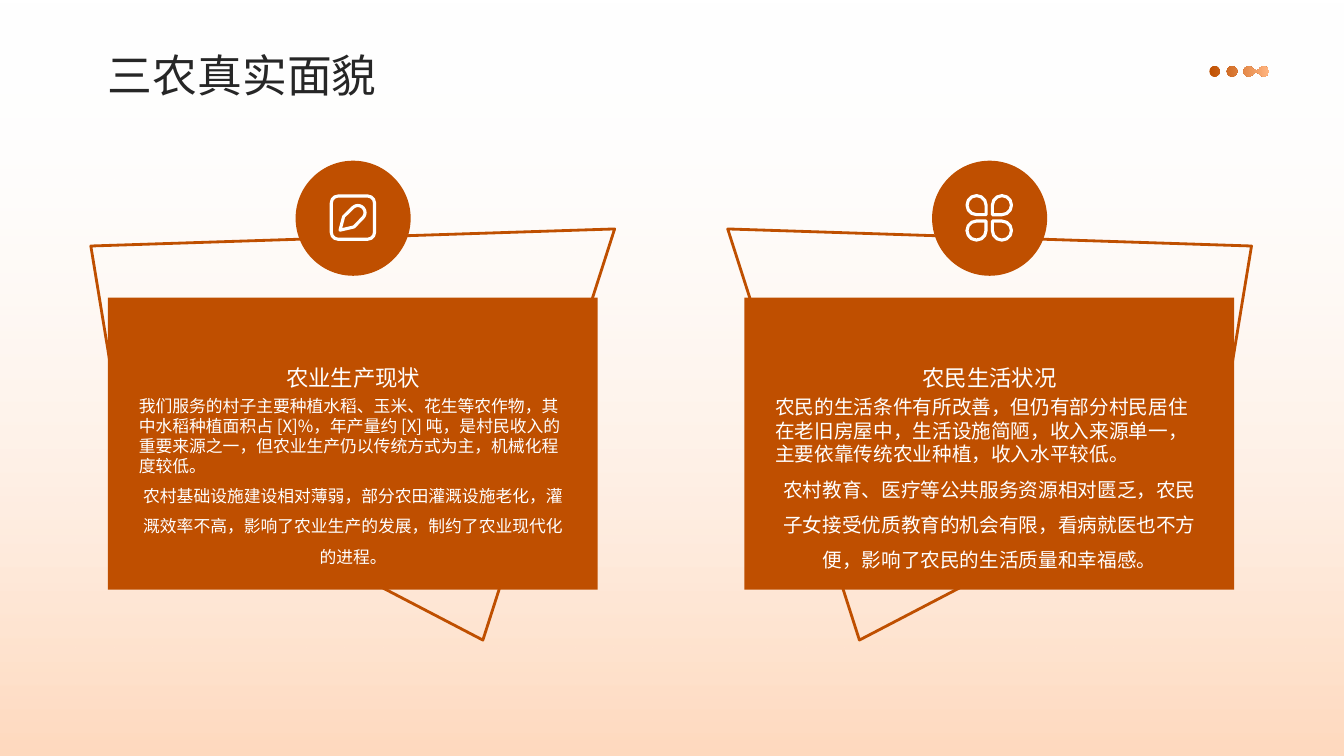
from math import cos, radians, sin

from lxml.etree import SubElement
from pptx import Presentation
from pptx.dml.color import RGBColor
from pptx.enum.shapes import MSO_SHAPE as Shape
from pptx.enum.text import MSO_ANCHOR as Anchor, PP_ALIGN as Align
from pptx.oxml.ns import qn
from pptx.util import Cm, Pt

FONT = "Noto Sans CJK SC"
RUST, WHITE, INK = "BF4F00", "FFFFFF", "262626"
PAGE_WIDTH, PAGE_HEIGHT = 33.87, 19.05
CARD_STEP = 16.04
MIRROR_SUM = 33.83  # left x + right x of mirrored frame corners
FRAME = [(12.17, 16.13), (3.15, 11.43), (2.29, 6.2), (15.49, 5.77)]

CARDS = [
    ("农业生产现状", 12,
     "我们服务的村子主要种植水稻、玉米、花生等农作物，其中水稻种植面积占 [X]%，年产量约 [X] 吨，"
     "是村民收入的重要来源之一，但农业生产仍以传统方式为主，机械化程度较低。",
     "农村基础设施建设相对薄弱，部分农田灌溉设施老化，灌溉效率不高，影响了农业生产的发展，"
     "制约了农业现代化的进程。"),
    ("农民生活状况", 14,
     "农民的生活条件有所改善，但仍有部分村民居住在老旧房屋中，生活设施简陋，收入来源单一，"
     "主要依靠传统农业种植，收入水平较低。",
     "农村教育、医疗等公共服务资源相对匮乏，农民子女接受优质教育的机会有限，看病就医也不方便，"
     "影响了农民的生活质量和幸福感。"),
]


def color(value):
    return RGBColor.from_string(value)


def paint(shape, fill=None, line=None, weight=2):
    shape.shadow.inherit = False
    if fill:
        shape.fill.solid()
        shape.fill.fore_color.rgb = color(fill)
    else:
        shape.fill.background()
    if line:
        shape.line.color.rgb = color(line)
        shape.line.width = Pt(weight)
    else:
        shape.line.fill.background()


def paint_gradient(shape, start, end, angle):
    """Fill with two colours; angle is counter-clockwise in degrees."""
    paint(shape)
    shape.fill.gradient()
    shape.fill.gradient_angle = angle
    for stop, value in zip(shape.fill.gradient_stops, (start, end)):
        stop.color.rgb = color(value)


def add_preset(page, kind, left, top, width, height, **look):
    shape = page.shapes.add_shape(kind, Cm(left), Cm(top), Cm(width), Cm(height))
    paint(shape, **look)
    return shape


def add_outline(page, *contours):
    """Build one freeform from closed contours given in centimetres."""
    contours = [[(Cm(x), Cm(y)) for x, y in contour] for contour in contours]
    builder = page.shapes.build_freeform(*contours[0][0], scale=1.0)
    for contour in contours:
        if contour is not contours[0]:
            builder.move_to(*contour[0])
        builder.add_line_segments(contour[1:], close=True)
    return builder.convert_to_shape()


def arc(x, y, radius, start, end, step=15):
    return [(x + radius * cos(radians(a)), y + radius * sin(radians(a)))
            for a in range(start, end + 1, step)]


def prepare_frame(frame, anchor):
    frame.word_wrap = True
    frame.vertical_anchor = anchor
    frame.margin_left = frame.margin_right = 0
    frame.margin_top = frame.margin_bottom = 0


def write(para, text, size, ink=WHITE, align=Align.LEFT, spacing=1.0):
    para.alignment = align
    para.line_spacing = spacing
    para.space_before = para.space_after = Pt(0)
    span = para.add_run()
    span.text = text
    span.font.size = Pt(size)
    span.font.name = FONT
    span.font.color.rgb = color(ink)
    SubElement(span.font._element, qn("a:ea"), typeface=FONT)


def add_text(page, left, top, width, height, anchor, *paragraphs):
    box = page.shapes.add_textbox(Cm(left), Cm(top), Cm(width), Cm(height))
    prepare_frame(box.text_frame, anchor)
    for index, (text, look) in enumerate(paragraphs):
        para = box.text_frame.add_paragraph() if index else box.text_frame.paragraphs[0]
        write(para, text, **look)


def add_title(page, text):
    title = page.shapes.title
    title.left, title.top = Cm(2.72), Cm(1.17)
    title.width, title.height = Cm(27.33), Cm(1.3)
    prepare_frame(title.text_frame, Anchor.MIDDLE)
    write(title.text_frame.paragraphs[0], text, 32, ink=INK, spacing=1.1)


def add_backdrop(page):
    """Lay a gradient that fades in downwards beneath the title."""
    backdrop = add_preset(page, Shape.RECTANGLE, 0, 0, PAGE_WIDTH, PAGE_HEIGHT)
    paint_gradient(backdrop, WHITE, "FFDABF", 270)
    first_color = next(backdrop.element.iter(qn("a:srgbClr")))
    SubElement(first_color, qn("a:alpha"), val="0")
    page.shapes.title.element.addprevious(backdrop.element)


def add_dots(page):
    y, radius = 1.8, 0.13
    singles = [arc(x, y, radius, 0, 345) for x in (30.61, 31.05)]
    linked = (arc(31.47, y, radius, 30, 330) + [(31.66, y - 0.02)]
              + arc(31.85, y, radius, 210, 510) + [(31.66, y + 0.02)])
    paint_gradient(add_outline(page, *singles, linked), RUST, "FFB47F", 0)


def add_card(page, shift, corners, heading, size, intro, detail):
    paint(add_outline(page, corners), line=RUST)
    add_preset(page, Shape.RECTANGLE, 2.72 + shift, 7.5, 12.34, 7.36, fill=RUST)
    add_preset(page, Shape.OVAL, 7.45 + shift, 4.05, 2.9, 2.9, fill=RUST)
    add_text(page, 3.5 + shift, 7.8, 10.8, 2.06, Anchor.BOTTOM,
             (heading, dict(size=16, align=Align.CENTER, spacing=1.3)))
    add_text(page, 3.5 + shift, 9.96, 10.8, 4.62, Anchor.TOP,
             (intro, dict(size=size)),
             (detail, dict(size=size, align=Align.CENTER, spacing=1.5)))


def add_pencil_icon(page):
    border = add_preset(page, Shape.ROUNDED_RECTANGLE, 8.35, 4.94, 1.09, 1.09,
                        line=WHITE, weight=2.25)
    border.adjustments[0] = 0.16
    pencil = [(8.57, 5.8), (8.66, 5.46)] + arc(9.02, 5.36, 0.18, -135, 45) + [(8.92, 5.72)]
    paint(add_outline(page, pencil), line=WHITE, weight=2.25)


def add_petal_icon(page):
    x, y, offset, size = 24.93, 5.49, 0.32, 0.48
    for rotation, side, level in ((90, -1, -1), (180, 1, -1), (270, 1, 1), (0, -1, 1)):
        petal = add_preset(page, Shape.TEAR, x + side * offset - size / 2,
                           y + level * offset - size / 2, size, size,
                           line=WHITE, weight=2.25)
        petal.rotation = rotation


def main():
    deck = Presentation()
    deck.slide_width, deck.slide_height = Cm(PAGE_WIDTH), Cm(PAGE_HEIGHT)
    page = deck.slides.add_slide(deck.slide_layouts[5])
    add_backdrop(page)
    add_title(page, "三农真实面貌")
    mirrored = [(MIRROR_SUM - x, y) for x, y in FRAME]
    for index, (corners, card) in enumerate(zip((FRAME, mirrored), CARDS)):
        add_card(page, index * CARD_STEP, corners, *card)
    add_pencil_icon(page)
    add_petal_icon(page)
    add_dots(page)
    deck.save("out.pptx")


if __name__ == "__main__":
    main()
